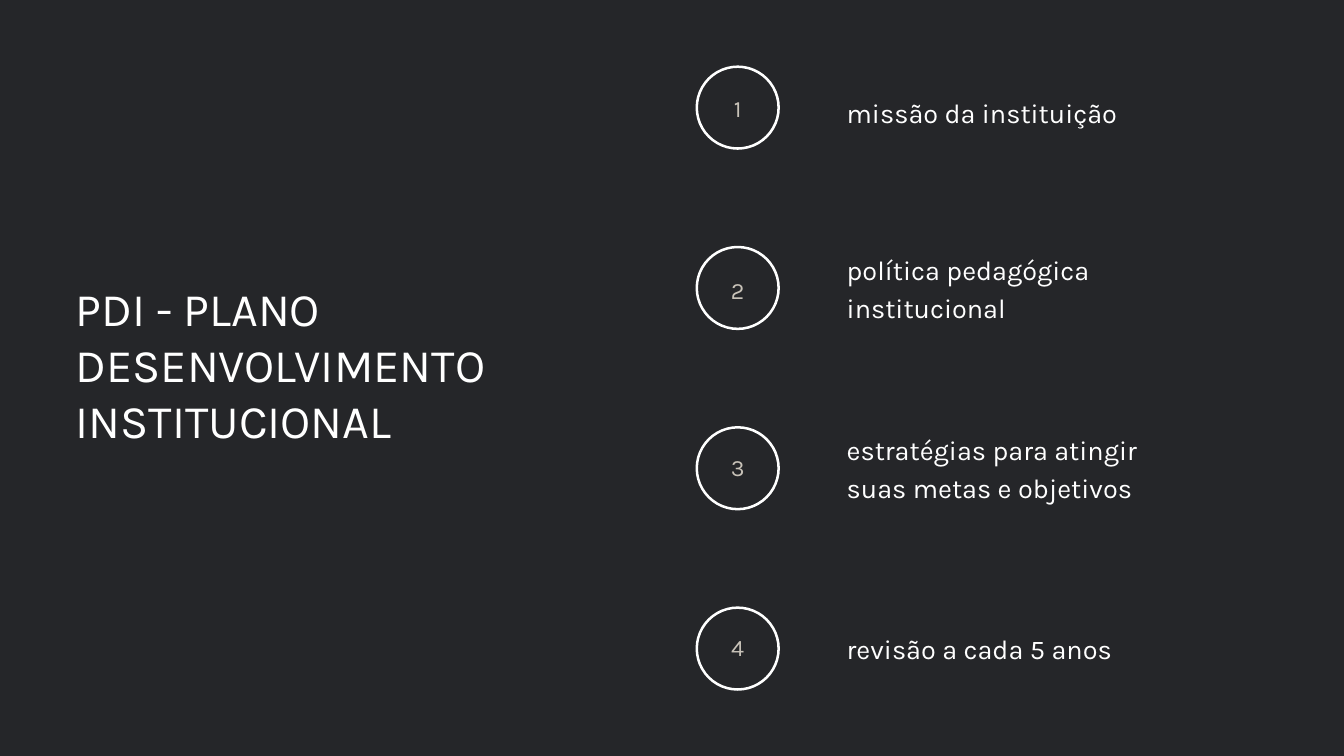
from dataclasses import dataclass

from pptx import Presentation
from pptx.dml.color import RGBColor
from pptx.enum.shapes import MSO_SHAPE as Preset
from pptx.enum.text import PP_ALIGN as Align
from pptx.util import Pt


@dataclass(frozen=True)
class Theme:
    background: RGBColor = RGBColor(0x25, 0x26, 0x29)
    white: RGBColor = RGBColor(0xFF, 0xFF, 0xFF)
    sand: RGBColor = RGBColor(0xC8, 0xC2, 0xB8)
    font: str = "Karla"
    title_size: float = 50
    item_size: float = 29
    number_size: float = 25


theme = Theme()


def add_text(slide, box, text, size, line_height, color, align=Align.LEFT):
    """Add a wrapped text box without margins; box is left, top, width, height."""
    shape = slide.shapes.add_textbox(*[Pt(length) for length in box])
    frame = shape.text_frame
    frame.word_wrap = True
    frame.margin_left = frame.margin_top = 0
    frame.margin_right = frame.margin_bottom = 0
    paragraph = frame.paragraphs[0]
    paragraph.alignment = align
    paragraph.line_spacing = Pt(line_height)
    run = paragraph.add_run()
    run.text = text
    run.font.name = theme.font
    run.font.size = Pt(size)
    run.font.color.rgb = color


presentation = Presentation()
presentation.slide_width = Pt(1440)
presentation.slide_height = Pt(810)
slide = presentation.slides.add_slide(presentation.slide_layouts[6])
slide.background.fill.solid()
slide.background.fill.fore_color.rgb = theme.background

add_text(slide, (81, 299.5, 502, 181), "PDI - PLANO DESENVOLVIMENTO INSTITUCIONAL",
         theme.title_size, 60, theme.white)

RING_LEFT, RING_TOP, RING_SIZE, RING_PITCH = 745.2, 70.1, 90.4, 193.2

# Item text, its top and height, and the top of its number
items = [
    ("missão da instituição", 97.2, 40, 100.8),
    ("política pedagógica institucional", 265.7, 80.6, 295.9),
    ("estratégias para atingir suas metas e objetivos", 458.6, 80.6, 485.3),
    ("revisão a cada 5 anos", 671.8, 40, 678.2),
]

for index, (text, text_top, text_height, number_top) in enumerate(items):
    ring = slide.shapes.add_shape(
        Preset.DONUT, Pt(RING_LEFT), Pt(RING_TOP + index * RING_PITCH),
        Pt(RING_SIZE), Pt(RING_SIZE))
    ring.adjustments[0] = 0.03
    ring.shadow.inherit = False
    ring.fill.solid()
    ring.fill.fore_color.rgb = theme.white
    ring.line.fill.background()

    add_text(slide, (772.6, number_top, 35.4, 31), str(index + 1),
             theme.number_size, 30, theme.sand, Align.CENTER)
    add_text(slide, (907.2, text_top, 345.6, text_height), text,
             theme.item_size, 40.6, theme.white)

presentation.save("out.pptx")
